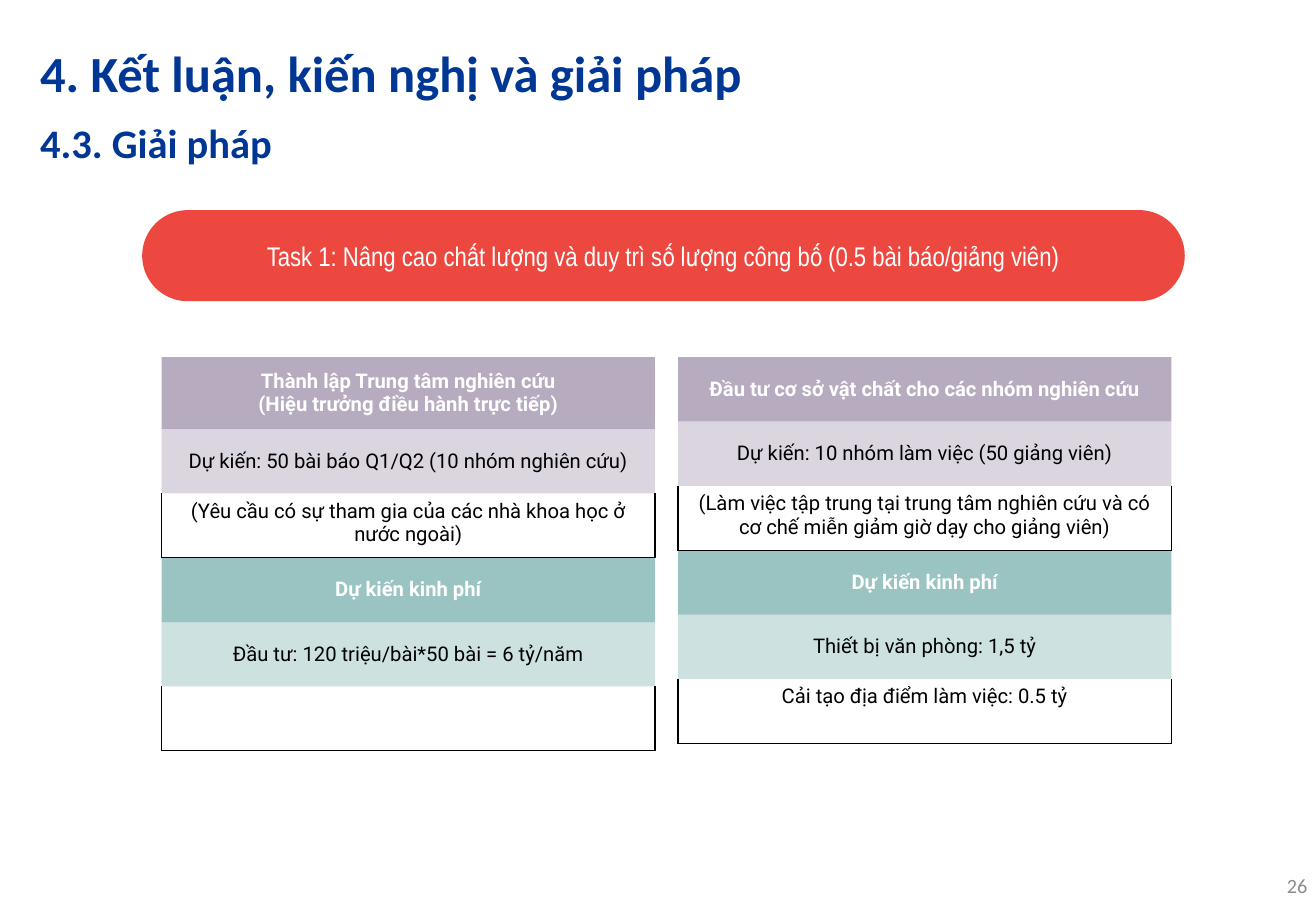
from lxml import etree
from pptx import Presentation
from pptx.dml.color import RGBColor
from pptx.enum.shapes import MSO_SHAPE
from pptx.enum.text import MSO_ANCHOR, MSO_AUTO_SIZE, PP_ALIGN as AL
from pptx.oxml import parse_xml
from pptx.oxml.ns import nsdecls, qn
from pptx.util import Inches, Pt

COLORS = {
    "navy": "003794",
    "gray": "8C8C8C",
    "red": "ED4840",
    "purple": "6E5981",
    "teal": "358A84",
    "white": "FFFFFF",
    "black": "000000",
}
PLAIN_TABLE_STYLE = "{2D5ABB26-0587-4C30-8999-92F81FD0307C}"

# Look of each table row: fill, opacity in percent, text colour, bold
HEADER, DETAIL = (50, "white", True), (25, "black", False)
ROW_LOOKS = [
    ("purple", *HEADER),
    ("purple", *DETAIL),
    None,
    ("teal", *HEADER),
    ("teal", *DETAIL),
    None,
]
CENTER_PLAN = [
    "Thành lập Trung tâm nghiên cứu\n(Hiệu trưởng điều hành trực tiếp)",
    "Dự kiến: 50 bài báo Q1/Q2 (10 nhóm nghiên cứu)",
    "(Yêu cầu có sự tham gia của các nhà khoa học ở nước ngoài)",
    "Dự kiến kinh phí",
    "Đầu tư: 120 triệu/bài*50 bài = 6 tỷ/năm",
    "",
]
FACILITY_PLAN = [
    "Đầu tư cơ sở vật chất cho các nhóm nghiên cứu",
    "Dự kiến: 10 nhóm làm việc (50 giảng viên)",
    "(Làm việc tập trung tại trung tâm nghiên cứu và có cơ chế miễn giảm giờ dạy cho giảng viên)",
    "Dự kiến kinh phí",
    "Thiết bị văn phòng: 1,5 tỷ",
    "Cải tạo địa điểm làm việc: 0.5 tỷ",
]


def rgb(name):
    return RGBColor.from_string(COLORS[name])


def set_margins(obj, inset):
    obj.margin_left = obj.margin_right = Inches(inset)
    obj.margin_top = obj.margin_bottom = Inches(inset)


def write(tf, text, size=12, font="Calibri", color="black", bold=False, align=AL.LEFT):
    """Fill a text frame, one paragraph for each line of text."""
    for i, line in enumerate(text.split("\n")):
        p = tf.add_paragraph() if i else tf.paragraphs[0]
        p.alignment = align
        r = p.add_run()
        r.text = line
        r.font.size, r.font.name, r.font.bold = Pt(size), font, bold
        r.font.color.rgb = rgb(color)


def prepare_frame(sp, inset=0):
    tf = sp.text_frame
    tf.word_wrap = True
    tf.auto_size = MSO_AUTO_SIZE.NONE
    tf.vertical_anchor = MSO_ANCHOR.MIDDLE
    set_margins(tf, inset)
    return tf


def add_title(s, text):
    sp = s.shapes.title
    sp.left, sp.top, sp.width, sp.height = map(Inches, (0.33, 0.26, 10.26, 0.67))
    write(prepare_frame(sp), text, size=30, color="navy", bold=True)


def add_text(s, box, text, **fmt):
    sp = s.shapes.add_textbox(*map(Inches, box))
    write(prepare_frame(sp), text, **fmt)


def add_task_banner(s, box, text):
    sp = s.shapes.add_shape(MSO_SHAPE.ROUNDED_RECTANGLE, *map(Inches, box))
    sp.adjustments[0] = 0.5
    sp.shadow.inherit = False
    sp.fill.solid()
    sp.fill.fore_color.rgb = rgb("red")
    sp.line.fill.background()
    write(prepare_frame(sp, 0.1), text, size=16, font="Arial Narrow",
          color="white", align=AL.CENTER)


def fill_cell(cell, color, opacity):
    cell.fill.solid()
    cell.fill.fore_color.rgb = rgb(color)
    srgb = cell._tc.tcPr.find(".//" + qn("a:srgbClr"))
    etree.SubElement(srgb, qn("a:alpha"), val=str(opacity * 1000))


def outline_cell(cell):
    """Draw the left, right and bottom borders."""
    cell.fill.background()
    for i, side in enumerate("LRB"):
        cell._tc.tcPr.insert(i, parse_xml(
            f'<a:ln{side} {nsdecls("a")} w="12700"><a:solidFill>'
            f'<a:srgbClr val="{COLORS["black"]}"/></a:solidFill></a:ln{side}>'))


def add_plan_table(s, left, texts):
    row_height = Inches(0.53)
    frame = s.shapes.add_table(len(texts), 1, Inches(left), Inches(2.94),
                               Inches(4.06), row_height * len(texts))
    table = frame.table
    table.first_row = table.horz_banding = False
    table._tbl.tblPr.find(qn("a:tableStyleId")).text = PLAIN_TABLE_STYLE
    for row, text, look in zip(table.rows, texts, ROW_LOOKS):
        row.height = row_height
        cell = row.cells[0]
        color, bold = "black", False
        if look:
            fill, opacity, color, bold = look
            fill_cell(cell, fill, opacity)
            set_margins(cell, 0.1)
            cell.vertical_anchor = MSO_ANCHOR.MIDDLE
        else:
            outline_cell(cell)
        if text:
            write(cell.text_frame, text, font="Roboto", color=color, bold=bold,
                  align=AL.CENTER)


def main():
    prs = Presentation()
    prs.slide_width, prs.slide_height = Inches(10.83), Inches(7.5)
    s = prs.slides.add_slide(prs.slide_layouts[5])
    add_title(s, "4. Kết luận, kiến nghị và giải pháp")
    add_text(s, (8.86, 7.09, 1.9, 0.39), "26", color="gray", align=AL.RIGHT)
    add_text(s, (0.33, 0.84, 10.26, 0.67), "4.3. Giải pháp",
             size=24, color="navy", bold=True)
    add_task_banner(s, (1.17, 1.73, 8.58, 0.75),
                    "Task 1: Nâng cao chất lượng và duy trì số lượng công bố "
                    "(0.5 bài báo/giảng viên)")
    add_plan_table(s, 5.58, FACILITY_PLAN)
    add_plan_table(s, 1.33, CENTER_PLAN)
    prs.save("out.pptx")


if __name__ == "__main__":
    main()
